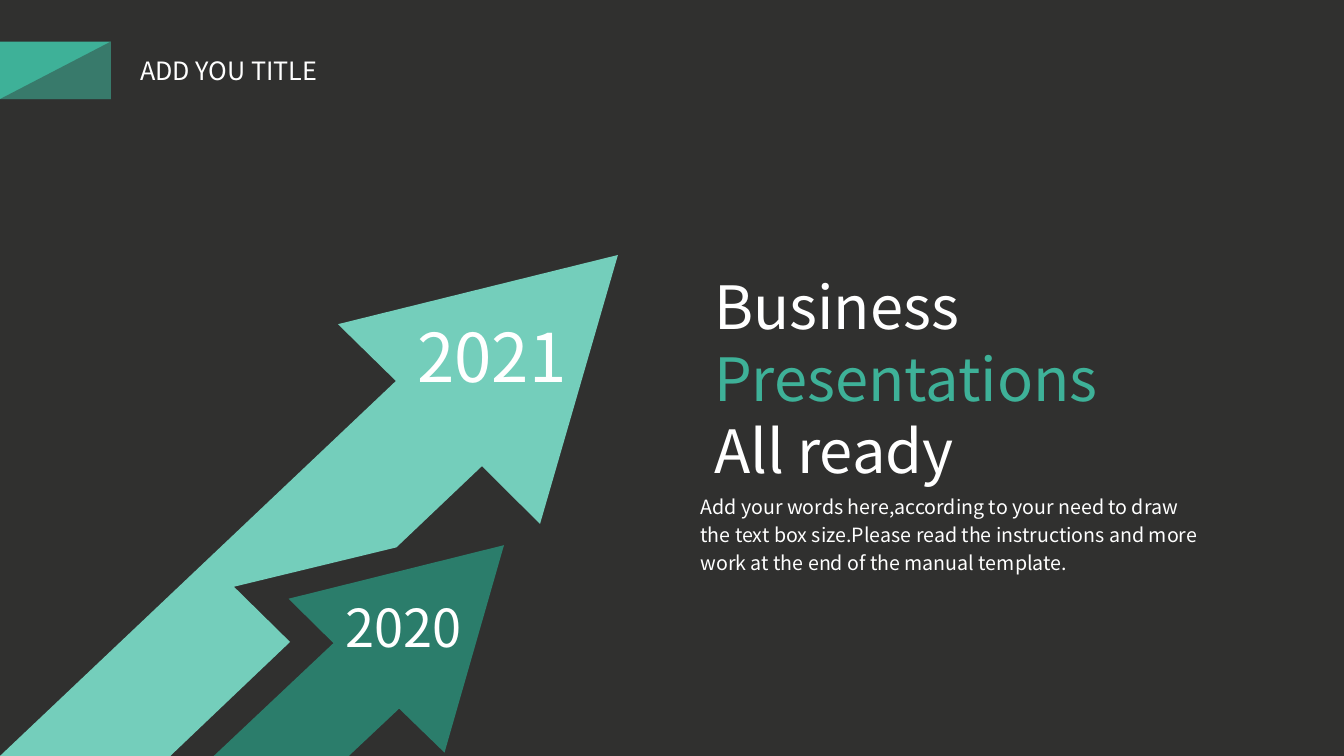
from dataclasses import dataclass

from lxml.etree import SubElement
from pptx import Presentation
from pptx.dml.color import RGBColor
from pptx.enum.shapes import MSO_SHAPE as Shape
from pptx.enum.text import MSO_ANCHOR as Anchor, MSO_AUTO_SIZE as AutoSize, PP_ALIGN as Align
from pptx.oxml.ns import qn
from pptx.util import Emu, Pt


@dataclass(frozen=True)
class Theme:
    font: str = "Noto Sans CJK JP"
    dark: str = "30302F"
    white: str = "FFFFFF"
    accent: str = "3EB198"
    light_arrow: str = "74CEBB"
    deep_arrow: str = "2B7D6B"
    title: float = 18
    headline: float = 42.6
    body: float = 14
    big_year: float = 48
    small_year: float = 37.4


class Deck:
    """Draws themed elements on a grid of 160 columns by 90 rows."""

    COLS, ROWS, CELL = 160, 90, 76200

    def __init__(self, theme):
        self.theme = theme
        self.prs = Presentation()
        self.prs.slide_width = self.cells(self.COLS)
        self.prs.slide_height = self.cells(self.ROWS)
        self.s = self.prs.slides.add_slide(self.prs.slide_layouts[6])
        fill = self.s.background.fill
        fill.solid()
        fill.fore_color.rgb = RGBColor.from_string(theme.dark)

    def cells(self, n):
        return Emu(round(n * self.CELL))

    def paint(self, sp, color, alpha=None):
        sp.shadow.inherit = False
        sp.fill.solid()
        sp.fill.fore_color.rgb = RGBColor.from_string(color)
        sp.line.fill.background()
        if alpha is not None:
            clr = sp._element.spPr.find(f"{qn('a:solidFill')}/{qn('a:srgbClr')}")
            SubElement(clr, qn("a:alpha"), val=str(alpha * 1000))

    def shape(self, kind, box, color, alpha=None, flip=False):
        sp = self.s.shapes.add_shape(kind, *map(self.cells, box))
        self.paint(sp, color, alpha)
        if flip:
            sp._element.spPr.xfrm.set("flipH", "1")

    def outline(self, points, color):
        start, *rest = [tuple(map(self.cells, pt)) for pt in points]
        builder = self.s.shapes.build_freeform(*start)
        builder.add_line_segments(rest, close=True)
        self.paint(builder.convert_to_shape(), color)

    def text(self, box, lines, size, colors=None, align=Align.LEFT, anchor=Anchor.TOP,
             inset=(1.2, 0.6), wrap=True, grow=True, spacing=None):
        tf = self.s.shapes.add_textbox(*map(self.cells, box)).text_frame
        tf.text = "\n".join(lines)
        tf.word_wrap = wrap
        tf.auto_size = AutoSize.SHAPE_TO_FIT_TEXT if grow else AutoSize.NONE
        tf.vertical_anchor = anchor
        tf.margin_left = tf.margin_right = self.cells(inset[0])
        tf.margin_top = tf.margin_bottom = self.cells(inset[1])
        for p, color in zip(tf.paragraphs, colors or [self.theme.white] * len(lines)):
            p.alignment = align
            p.line_spacing = spacing
            for r in p.runs:
                r.font.name = self.theme.font
                r.font.size = Pt(size)
                r.font.color.rgb = RGBColor.from_string(color)


def main():
    t = Theme()
    deck = Deck(t)

    badge = (0, 4.95, 13.2, 6.85)
    deck.shape(Shape.RECTANGLE, badge, t.accent)
    deck.shape(Shape.RIGHT_TRIANGLE, badge, t.dark, alpha=42, flip=True)
    deck.text((15.5, 6, 25.2, 4.8), ["ADD YOU TITLE"], t.title, wrap=False)

    deck.outline([(73.57, 30.36), (40.24, 38.6), (47.14, 45.36), (0, 90), (20.28, 90),
                  (34.54, 76.43), (27.86, 69.86), (47.2, 65.17), (57.38, 55.5),
                  (64.3, 62.38)], t.light_arrow)
    deck.outline([(60, 64.9), (34.35, 71.28), (39.7, 76.56), (25.44, 90), (41.52, 90),
                  (47.52, 84.36), (52.92, 89.6)], t.deep_arrow)

    deck.text((83.4, 33.25, 53.75, 23.4), ["Business", "Presentations", "All ready"],
              t.headline, colors=[t.white, t.accent, t.white], anchor=Anchor.MIDDLE,
              inset=(1.6, 0.8), grow=False)
    deck.text((45, 37, 27.1, 10.9), ["2021"], t.big_year, align=Align.CENTER)
    deck.text((37, 70.3, 22, 8.8), ["2020"], t.small_year, align=Align.CENTER)
    deck.text((83.4, 58.3, 60.6, 10.2),
              ["Add your words here,according to your need to draw the text box size."
               "Please read the instructions and more work at the end of the manual template."],
              t.body, inset=(0, 0), spacing=1.2)

    deck.prs.save("out.pptx")


if __name__ == "__main__":
    main()
